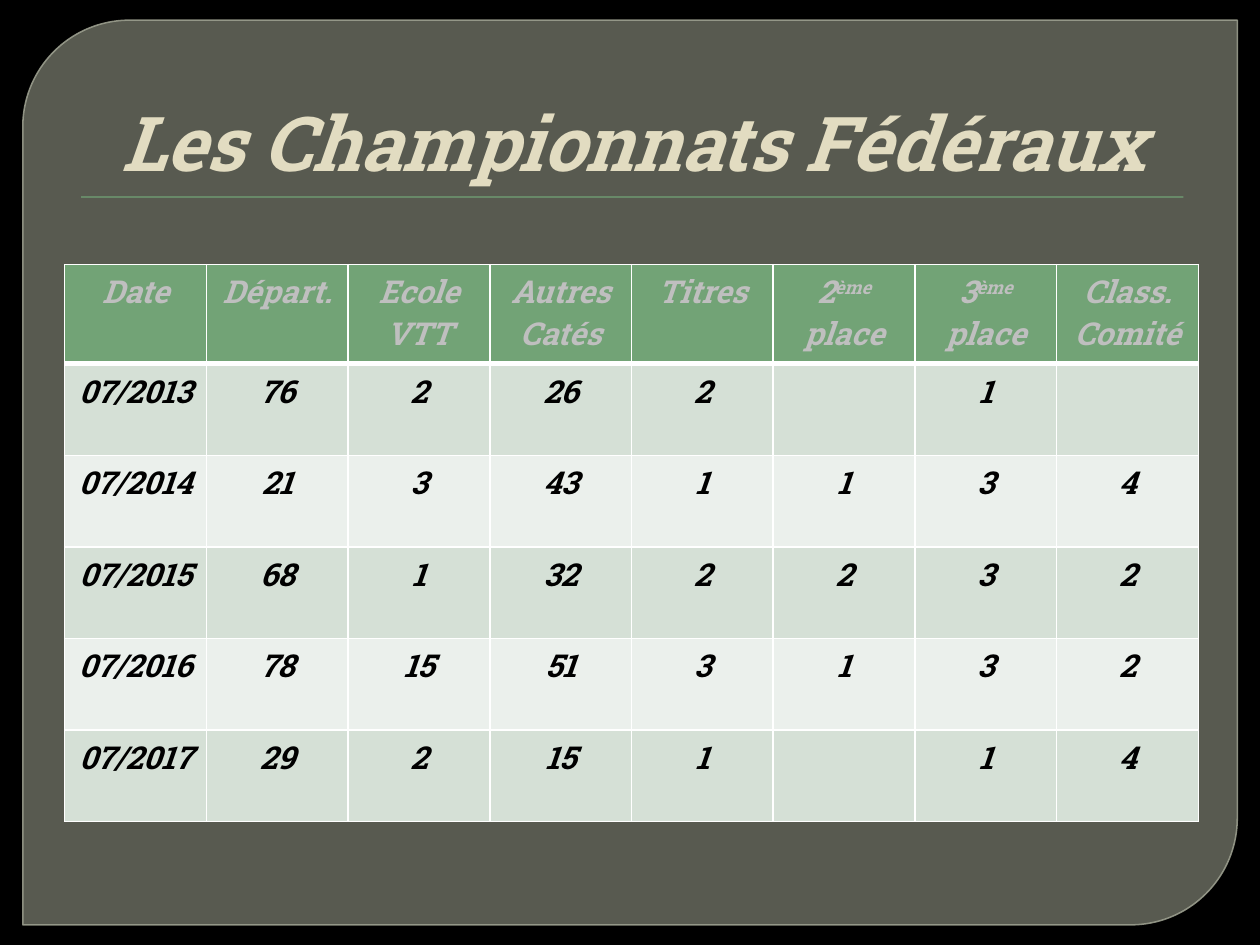
from lxml import etree
from pptx import Presentation
from pptx.dml.color import RGBColor
from pptx.enum import shapes, text
from pptx.oxml import parse_xml
from pptx.oxml.ns import nsdecls, qn
from pptx.util import Pt

FONT = "Roboto Slab"
GREEN, WHITE = "72A376", "FFFFFF"
BANDS = ("D5E0D6", "EBF0EC")
HEADERS = ["Date", "Départ.", "Ecole VTT", "Autres Catés", "Titres",
           ("2", "ème", " place"), ("3", "ème", " place"), "Class. Comité"]
RESULTS = [
    ["07/2013", "76", "2", "26", "2", "", "1", ""],
    ["07/2014", "21", "3", "43", "1", "1", "3", "4"],
    ["07/2015", "68", "1", "32", "2", "2", "3", "2"],
    ["07/2016", "78", "15", "51", "3", "1", "3", "2"],
    ["07/2017", "29", "2", "15", "1", "", "1", "4"],
]


def color(value):
    return RGBColor.from_string(value)


def paint(fill, value):
    fill.solid()
    fill.fore_color.rgb = color(value)


def format_font(font, size, value):
    settings = {"name": FONT, "size": Pt(size), "bold": True, "italic": True}
    for name, setting in settings.items():
        setattr(font, name, setting)
    font.color.rgb = color(value)


def set_alpha(fill_holder, percent):
    """Make the solid fill inside an element partly transparent."""
    rgb = fill_holder.find(qn("a:solidFill")).find(qn("a:srgbClr"))
    etree.SubElement(rgb, qn("a:alpha")).set("val", str(percent * 1000))


def add_panel(slide):
    panel = slide.shapes.add_shape(shapes.MSO_SHAPE.ROUND_2_DIAG_RECTANGLE,
                                   Pt(13), Pt(11.5), Pt(694), Pt(517))
    panel.adjustments[0] = 0.118
    panel.adjustments[1] = 0
    panel.shadow.inherit = False
    paint(panel.fill, "888B7B")
    set_alpha(panel.element.spPr, 65)
    paint(panel.line.fill, "9DA090")
    panel.line.width = Pt(0.87)
    set_alpha(panel.element.spPr.find(qn("a:ln")), 88)


def add_rule(slide):
    rule = slide.shapes.add_shape(shapes.MSO_SHAPE.RECTANGLE,
                                  Pt(46.3), Pt(112.2), Pt(630), Pt(0.72))
    paint(rule.fill, GREEN)
    rule.line.fill.background()
    rule.element.spPr.append(parse_xml(
        f'<a:effectLst {nsdecls("a")}><a:outerShdw blurRad="12700" dist="12700" dir="5400000">'
        '<a:srgbClr val="000000"><a:alpha val="75000"/></a:srgbClr>'
        '</a:outerShdw></a:effectLst>'))


def set_title(slide, wording):
    title = slide.shapes.title
    position = {"left": 36, "top": 20, "width": 648, "height": 90}
    for name, points in position.items():
        setattr(title, name, Pt(points))
    frame = title.text_frame
    settings = {"text": wording, "word_wrap": True,
                "auto_size": text.MSO_AUTO_SIZE.NONE,
                "vertical_anchor": text.MSO_ANCHOR.BOTTOM}
    for name, setting in settings.items():
        setattr(frame, name, setting)
    paragraph = frame.paragraphs[0]
    paragraph.alignment = text.PP_ALIGN.CENTER
    paragraph._p.get_or_add_pPr().set("marL", str(Pt(4.3)))
    format_font(paragraph.runs[0].font, 43.2, "E2DCC1")
    # Bring the title in front of the panel
    title.element.getparent().append(title.element)


def set_borders(cell, bottom, top):
    """Draw white borders; they must come before the cell's fill."""
    widths = {"L": 1, "R": 1, "T": top, "B": bottom}
    properties = cell._tc.get_or_add_tcPr()
    for index, (side, width) in enumerate(widths.items()):
        properties.insert(index, parse_xml(
            f'<a:ln{side} {nsdecls("a")} w="{Pt(width)}"><a:solidFill>'
            f'<a:srgbClr val="{WHITE}"/></a:solidFill></a:ln{side}>'))


def fill_cell(cell, content, font_color, background, bottom=1, top=1):
    paragraph = cell.text_frame.paragraphs[0]
    paragraph.alignment = text.PP_ALIGN.CENTER
    parts = (content,) if isinstance(content, str) else content
    for index, part in enumerate(parts):
        if not part:
            continue
        run = paragraph.add_run()
        run.text = part
        format_font(run.font, 18, font_color)
        if index == 1:  # ordinal ending
            run.font._element.set("baseline", "30000")
    paint(cell.fill, background)
    set_borders(cell, bottom, top)


def add_results_table(slide):
    frame = slide.shapes.add_table(len(RESULTS) + 1, len(HEADERS),
                                   Pt(36.9), Pt(151.2), Pt(648), Pt(318))
    table = frame.table
    for column in table.columns:
        column.width = Pt(81)
    for index, row in enumerate(table.rows):
        row.height = Pt(52.3) if index > 0 else Pt(56.7)
    for column, header in enumerate(HEADERS):
        fill_cell(table.cell(0, column), header, "BFBFBF", GREEN, bottom=3)
    for row, values in enumerate(RESULTS):
        for column, value in enumerate(values):
            fill_cell(table.cell(row + 1, column), value, "000000",
                      BANDS[row % 2], top=3 if row == 0 else 1)


def main():
    presentation = Presentation()
    presentation.slide_width, presentation.slide_height = Pt(720), Pt(540)
    slide = presentation.slides.add_slide(presentation.slide_layouts[5])
    paint(slide.background.fill, "000000")
    # Backdrop
    add_panel(slide)
    add_rule(slide)
    # Content
    set_title(slide, "Les Championnats Fédéraux")
    add_results_table(slide)
    presentation.save("out.pptx")


if __name__ == "__main__":
    main()
